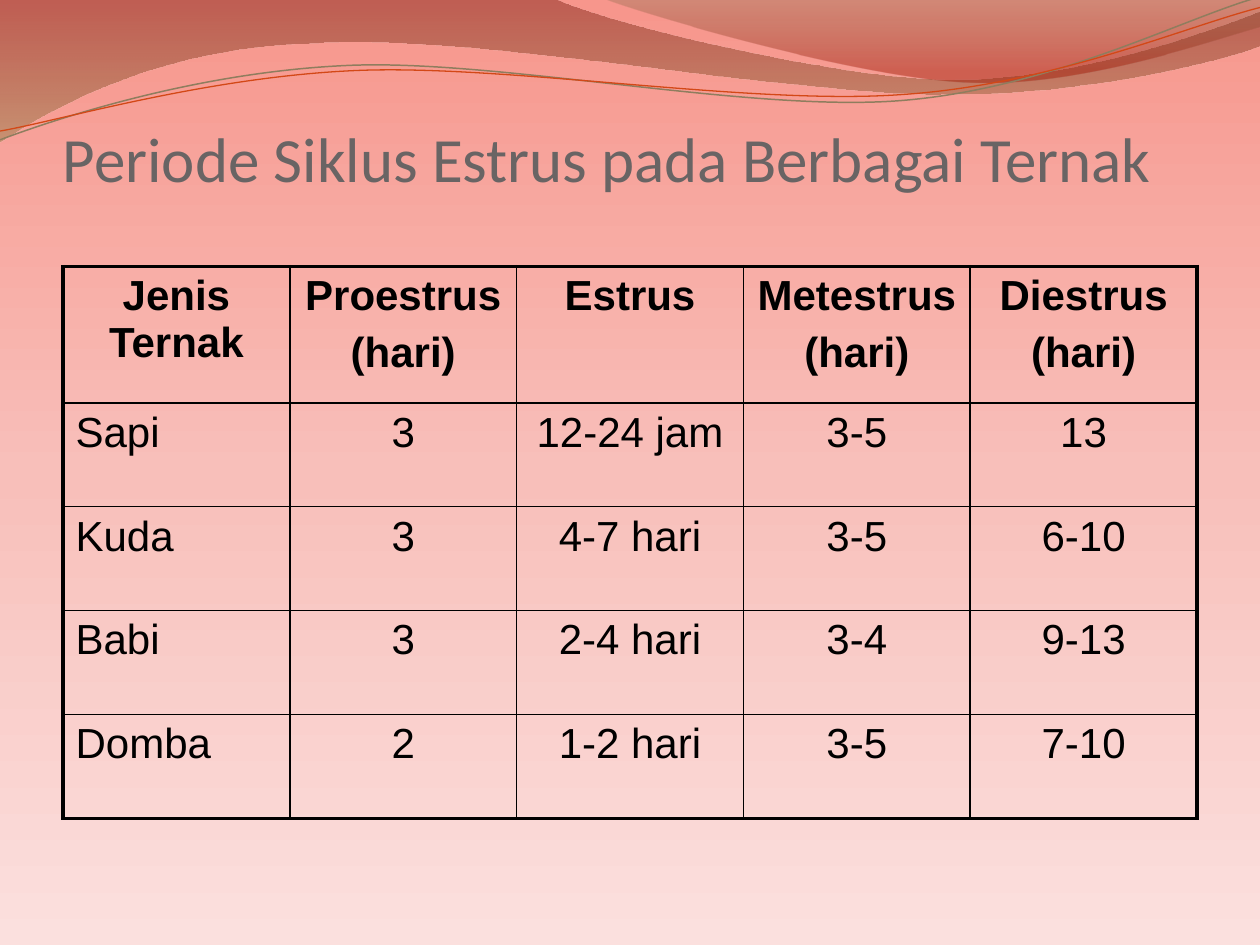
import math

import pptx
import pptx.dml.color
import pptx.enum.text
import pptx.oxml
import pptx.oxml.ns
import pptx.util
from lxml import etree

Pt = pptx.util.Pt
RGBColor = pptx.dml.color.RGBColor
Align = pptx.enum.text.PP_ALIGN
Anchor = pptx.enum.text.MSO_ANCHOR
qn = pptx.oxml.ns.qn

BLACK = RGBColor(0x00, 0x00, 0x00)
TITLE_GREY = RGBColor(0x69, 0x64, 0x64)
OLIVE = RGBColor(0x8F, 0x7D, 0x5E)
ORANGE = RGBColor(0xD3, 0x48, 0x17)
SALMON = RGBColor(0xF7, 0x96, 0x8C)
ROSE = RGBColor(0xF8, 0xBF, 0xBA)
BLUSH = RGBColor(0xFB, 0xE0, 0xDE)
MAROON = RGBColor(0x7C, 0x1A, 0x0E)
SAND = RGBColor(0xA1, 0x85, 0x52)
BROWN = RGBColor(0x7E, 0x6B, 0x48)
RED = RGBColor(0x9F, 0x17, 0x05)

# Each segment holds one point (straight) or three (cubic curve), in points.
WIDE_WAVE = [
    [(0, 0)], [(316.8, -0.7)],
    [(342.7, 12.2), (478.1, 45.4), (545.8, 45.4)],
    [(614.2, 45.4), (689.8, 18.7), (720, 6.5)],
    [(720.7, 25.9)],
    [(707.8, 31.7), (626.4, 54.7), (537.1, 54)],
    [(447.8, 54), (275, 20.2), (185, 24.5)],
    [(92.9, 25.9), (33.1, 59.8), (-0.7, 81.4)],
    [(0, 0)],
]
RIGHT_WAVE = [
    [(344.9, -0.7)],
    [(366.5, 7.9), (491, 44.6), (553.7, 46.8)],
    [(616.3, 49.7), (691.9, 23), (720, 15.1)],
    [(720, 0)], [(344.9, -0.7)],
]
OLIVE_STRAND = [
    [(0, 79.9)],
    [(34.6, 67), (113.8, 41), (199.4, 37.4)],
    [(284.4, 33.8), (427, 64.1), (513.4, 57.6)],
    [(599.8, 51.1), (675.4, 10.8), (718.6, -1.4)],
]
ORANGE_STRAND = [
    [(0, 74.9)],
    [(33.8, 69.1), (118.1, 43.9), (203.8, 40.3)],
    [(290.2, 36.7), (429.8, 60.5), (516.2, 54)],
    [(601.9, 48.2), (677.5, 15.1), (720, 4.3)],
]
STRAND_TILT = -2.7
STRAND_CENTRE = (360, 42)

CYCLES = [
    ["Jenis Ternak", "Proestrus\n(hari)", "Estrus", "Metestrus\n(hari)", "Diestrus\n(hari)"],
    ["Sapi", "3", "12-24 jam", "3-5", "13"],
    ["Kuda", "3", "4-7 hari", "3-5", "6-10"],
    ["Babi", "3", "2-4 hari", "3-4", "9-13"],
    ["Domba", "2", "1-2 hari", "3-5", "7-10"],
]


def write_text(frame, text, font, size, color, bold=False, align=Align.LEFT, gap=0):
    """Fill a text frame, one paragraph per line, with gap points between them."""
    for index, line in enumerate(text.split("\n")):
        paragraph = frame.paragraphs[0] if index == 0 else frame.add_paragraph()
        paragraph.alignment = align
        if index:
            paragraph.space_before = Pt(gap)
        run = paragraph.add_run()
        run.text = line
        run.font.name = font
        run.font.size = Pt(size)
        run.font.bold = bold
        run.font.color.rgb = color


def turn(segments, degrees, centre):
    cos, sin = math.cos(math.radians(degrees)), math.sin(math.radians(degrees))
    cx, cy = centre
    return [[(cx + (x - cx) * cos - (y - cy) * sin, cy + (x - cx) * sin + (y - cy) * cos)
             for x, y in segment] for segment in segments]


def bend(shape, segments):
    """Merge the three lines drawn for each cubic segment into one curve."""
    lines = iter(list(shape.element.iter(qn("a:lnTo"))))
    for segment in segments[1:]:
        first, *others = [next(lines) for _ in segment]
        if others:
            first.tag = qn("a:cubicBezTo")
            for line in others:
                first.append(line[0])
                line.getparent().remove(line)


def downward_gradient(fill, owner, stops):
    """Set (position %, colour, opacity %) stops running from top to bottom."""
    fill.gradient()
    fill.gradient_angle = 270
    stop_list = next(owner.iter(qn("a:gsLst")))
    for old_stop in list(stop_list):
        stop_list.remove(old_stop)
    for position, color, opacity in stops:
        stop = etree.SubElement(stop_list, qn("a:gs"), pos=str(position * 1000))
        value = etree.SubElement(stop, qn("a:srgbClr"), val=str(color))
        if opacity < 100:
            etree.SubElement(value, qn("a:alpha"), val=str(opacity * 1000))


class SlideBuilder:
    title_style = dict(font="Calibri", size=36, color=TITLE_GREY)
    cell_style = dict(font="Arial", size=24, color=BLACK, gap=5.6)
    outer_border, inner_border = 2.25, 1

    def __init__(self, slide):
        self.slide = slide

    def background(self, stops):
        downward_gradient(self.slide.background.fill, self.slide.element, stops)

    def outline(self, segments, close):
        start, *rest = [(Pt(x), Pt(y)) for segment in segments for x, y in segment]
        builder = self.slide.shapes.build_freeform(*start)
        builder.add_line_segments(rest, close=close)
        shape = builder.convert_to_shape()
        bend(shape, segments)
        shape.shadow.inherit = False
        return shape

    def wave(self, segments, stops):
        shape = self.outline(segments, close=True)
        downward_gradient(shape.fill, shape.element, stops)
        shape.line.fill.background()

    def strand(self, segments, color, width):
        shape = self.outline(turn(segments, -STRAND_TILT, STRAND_CENTRE), close=False)
        shape.rotation = STRAND_TILT
        shape.fill.background()
        shape.line.color.rgb = color
        shape.line.width = Pt(width)

    def title(self, text, left, top, width, height):
        box = self.slide.shapes.add_textbox(Pt(left), Pt(top), Pt(width), Pt(height))
        frame = box.text_frame
        frame.word_wrap = True
        frame.vertical_anchor = Anchor.BOTTOM
        frame.margin_left = frame.margin_right = frame.margin_bottom = 0
        frame.margin_top = Pt(3.6)
        write_text(frame, text, **self.title_style)

    def border(self, cell, side, width):
        line = etree.SubElement(cell._tc.get_or_add_tcPr(), qn("a:ln" + side), w=str(Pt(width)))
        fill = etree.SubElement(line, qn("a:solidFill"))
        etree.SubElement(fill, qn("a:srgbClr"), val=str(BLACK))

    def table(self, rows, left, top, column_width, row_heights):
        row_count, column_count = len(rows), len(rows[0])
        table = self.slide.shapes.add_table(
            row_count, column_count, Pt(left), Pt(top),
            Pt(column_width * column_count), Pt(sum(row_heights))).table
        table.first_row = table.horz_banding = False
        for column in table.columns:
            column.width = Pt(column_width)
        for r, (values, height) in enumerate(zip(rows, row_heights)):
            table.rows[r].height = Pt(height)
            for c, value in enumerate(values):
                cell = table.cell(r, c)
                edges = {"L": c == 0, "R": c == column_count - 1,
                         "T": r == 0, "B": r == row_count - 1}
                for side, is_outer in edges.items():
                    self.border(cell, side, self.outer_border if is_outer else self.inner_border)
                cell.fill.background()
                write_text(cell.text_frame, value, bold=r == 0,
                           align=Align.LEFT if r and c == 0 else Align.CENTER,
                           **self.cell_style)


def main():
    presentation = pptx.Presentation()
    presentation.slide_width, presentation.slide_height = Pt(720), Pt(540)
    page = SlideBuilder(presentation.slides.add_slide(presentation.slide_layouts[6]))

    page.background([(0, SALMON, 100), (50, ROSE, 100), (100, BLUSH, 100)])
    page.wave(WIDE_WAVE, [(0, MAROON, 45), (100, SAND, 55)])
    page.wave(RIGHT_WAVE, [(0, BROWN, 30), (80, RED, 45)])
    page.strand(OLIVE_STRAND, OLIVE, 0.85)
    page.strand(ORANGE_STRAND, ORANGE, 0.75)
    page.title("Periode Siklus Estrus pada Berbagai Ternak", 36, 21.6, 648, 90)
    page.table(CYCLES, 36, 152.4, 129.6, [77.8] + [59.4] * 4)

    presentation.save("out.pptx")


if __name__ == "__main__":
    main()
